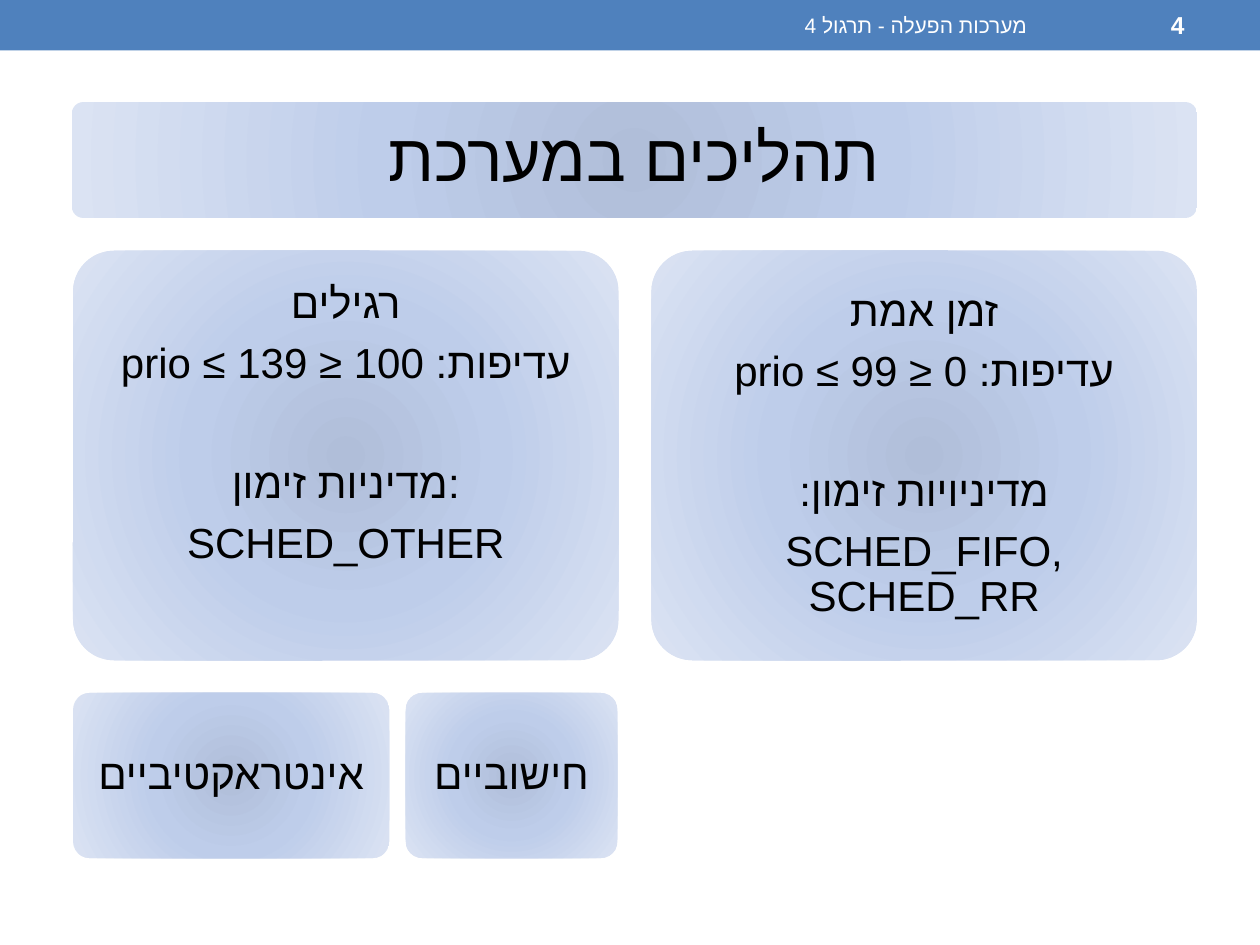
import pptx
import pptx.util
import pptx.dml.color
import pptx.enum.shapes
import pptx.enum.text
import pptx.oxml
import pptx.oxml.ns
import lxml.etree

Inches = pptx.util.Inches
Pt = pptx.util.Pt
kinds = pptx.enum.shapes.MSO_SHAPE
aligns = pptx.enum.text.PP_ALIGN
qn = pptx.oxml.ns.qn

hues = {"bar": "4F81BD", "core": "B0BED9", "mid": "BECDEA", "rim": "DBE3F3",
        "ink": "000000", "white": "FFFFFF"}
stops = [(0, "core"), (45, "mid"), (100, "rim")]

deck = pptx.Presentation()
deck.slide_width = Inches(10)
deck.slide_height = Inches(7.5)
slide = deck.slides.add_slide(deck.slide_layouts[6])


def write(frame, lines, size, hue, align, bold=False):
    frame.word_wrap = True
    frame.vertical_anchor = pptx.enum.text.MSO_ANCHOR.MIDDLE
    for num, (text, rtl, form) in enumerate(lines):
        para = frame.paragraphs[0] if num == 0 else frame.add_paragraph()
        para.text = text
        for key, val in {"alignment": align, **form}.items():
            setattr(para, key, val)
        if rtl:
            para._p.get_or_add_pPr().set("rtl", "1")
        for run in para.runs:
            for key, val in {"name": "Arial", "size": Pt(size), "bold": bold}.items():
                setattr(run.font, key, val)
            run.font.color.rgb = pptx.dml.color.RGBColor.from_string(hues[hue])
            lxml.etree.SubElement(run._r.get_or_add_rPr(), qn("a:cs"), typeface="Arial")


def shade(shape):
    marks = "".join(f'<a:gs pos="{pos * 1000}"><a:srgbClr val="{hues[hue]}"/></a:gs>'
                    for pos, hue in stops)
    grad = pptx.oxml.parse_xml(
        f'<a:gradFill {pptx.oxml.ns.nsdecls("a")} rotWithShape="1"><a:gsLst>{marks}</a:gsLst>'
        '<a:path path="circle"><a:fillToRect l="50000" t="50000" r="50000" b="50000"/></a:path>'
        '</a:gradFill>')
    shape._element.spPr.find(qn("a:prstGeom")).addnext(grad)


bar = slide.shapes.add_shape(kinds.RECTANGLE, 0, 0, Inches(10), Inches(0.4))
bar.shadow.inherit = False
bar.fill.solid()
bar.fill.fore_color.rgb = pptx.dml.color.RGBColor.from_string(hues["bar"])
bar.line.fill.background()

heads = [("מערכות הפעלה - תרגול 4", 3.75, 4.5, 12, False), ("4", 8.33, 1.17, 14, True)]
for text, left, width, size, bold in heads:
    box = slide.shapes.add_textbox(Inches(left), Inches(0.02), Inches(width), Inches(0.36))
    write(box.text_frame, [(text, True, {})], size, "white", aligns.RIGHT, bold)

tight = {"line_spacing": 0.9, "space_after": Pt(8.4)}
loose = {"line_spacing": 0.9, "space_after": Pt(42.6)}
real = [("זמן אמת", True, tight), ("עדיפות: 0 ≤ prio ≤ 99", True, loose),
        ("מדיניויות זימון:", True, tight), ("SCHED_FIFO,\nSCHED_RR", True, tight)]
plain = [("רגילים", False, tight), ("עדיפות: 100 ≤ prio ≤ 139", True, loose),
         ("מדיניות זימון:", False, tight), ("SCHED_OTHER", False, tight)]

cards = [
    (0.57, 0.81, 8.93, 0.92, 38, 0.16, 0.16, [("תהליכים במערכת", False, tight)]),
    (5.17, 1.99, 4.33, 3.25, 24, 0.1, 0.1, real),
    (0.58, 1.99, 4.33, 3.25, 24, 0.1, 0.58, plain),
    (3.22, 5.5, 1.68, 1.31, 24, 0.1, 0.1, [("חישוביים", False, tight)]),
    (0.58, 5.5, 2.51, 1.31, 24, 0.1, 0.1, [("אינטראקטיביים", False, tight)]),
]
for left, top, width, height, size, pad, foot, lines in cards:
    card = slide.shapes.add_shape(kinds.ROUNDED_RECTANGLE, Inches(left), Inches(top),
                                  Inches(width), Inches(height))
    card.adjustments[0] = 0.1
    card.shadow.inherit = False
    card.line.fill.background()
    shade(card)
    for side in ("left", "right", "top"):
        setattr(card.text_frame, f"margin_{side}", Inches(pad))
    card.text_frame.margin_bottom = Inches(foot)
    write(card.text_frame, lines, size, "ink", aligns.CENTER)

deck.save("out.pptx")
